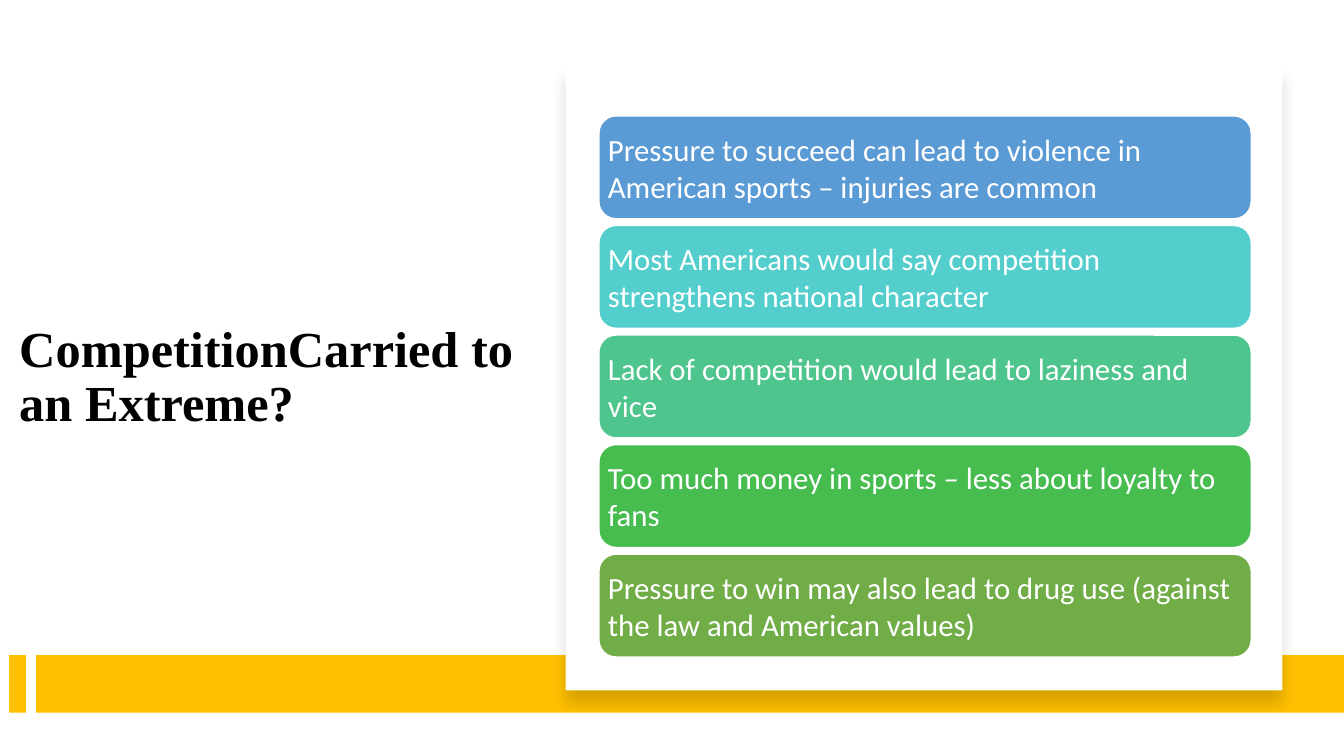
from dataclasses import dataclass

import pptx
import pptx.dml.color
import pptx.enum.shapes
import pptx.enum.text
import pptx.oxml
import pptx.oxml.ns
import pptx.util
from pptx.util import Inches


@dataclass(frozen=True)
class Theme:
    black: str = "000000"
    white: str = "FFFFFF"
    gold: str = "FFC000"
    point_fills: tuple = ("5B9BD5", "54CDCD", "4DC58D", "47BC4F", "71AD47")
    title_font: str = "Times New Roman"
    body_font: str = "Calibri"
    title_size: int = 36
    body_size: int = 22


THEME = Theme()

TITLE = "CompetitionCarried to an Extreme?"
POINTS = (
    "Pressure to succeed can lead to violence in American sports – injuries are common",
    "Most Americans would say competition strengthens national character",
    "Lack of competition would lead to laziness and vice",
    "Too much money in sports – less about loyalty to fans",
    "Pressure to win may also lead to drug use (against the law and American values)",
)


def rgb(color):
    return pptx.dml.color.RGBColor.from_string(color)


def write_text(shape, text, *, font, size, color, bold=False, line_spacing=1.0, margin=0.1):
    """Fill a shape with one left-aligned, vertically centred paragraph."""
    frame = shape.text_frame
    frame.word_wrap = True
    frame.auto_size = pptx.enum.text.MSO_AUTO_SIZE.NONE
    frame.vertical_anchor = pptx.enum.text.MSO_ANCHOR.MIDDLE
    frame.margin_left = frame.margin_right = Inches(margin)
    frame.margin_top = frame.margin_bottom = Inches(margin)
    paragraph = frame.paragraphs[0]
    paragraph.alignment = pptx.enum.text.PP_ALIGN.LEFT
    paragraph.line_spacing = line_spacing
    run = paragraph.add_run()
    run.text = text
    run.font.name = font
    run.font.size = pptx.util.Pt(size)
    run.font.bold = bold
    run.font.color.rgb = rgb(color)


def add_block(slide, left, top, width, height, fill, *, rounded=False, line=None):
    shapes = pptx.enum.shapes.MSO_SHAPE
    kind = shapes.ROUNDED_RECTANGLE if rounded else shapes.RECTANGLE
    block = slide.shapes.add_shape(
        kind, Inches(left), Inches(top), Inches(width), Inches(height))
    block.shadow.inherit = False
    block.fill.solid()
    block.fill.fore_color.rgb = rgb(fill)
    if line:
        block.line.color.rgb = rgb(line)
        block.line.width = pptx.util.Pt(1)
    else:
        block.line.fill.background()
    return block


def add_soft_shadow(shape, color, *, blur, distance, opacity):
    """Cast a shadow straight down; lengths in points, opacity in percent."""
    effects = shape._element.spPr.find(pptx.oxml.ns.qn("a:effectLst"))
    effects.append(pptx.oxml.parse_xml(
        f'<a:outerShdw {pptx.oxml.ns.nsdecls("a")} blurRad="{pptx.util.Pt(blur)}" '
        f'dist="{pptx.util.Pt(distance)}" dir="5400000" algn="t" rotWithShape="0">'
        f'<a:srgbClr val="{color}"><a:alpha val="{opacity * 1000}"/></a:srgbClr>'
        "</a:outerShdw>"))


def place_title(slide):
    title = slide.shapes.title
    title.left, title.top = Inches(0.09), Inches(1.2)
    title.width, title.height = Inches(5.73), Inches(5.1)
    write_text(title, TITLE, font=THEME.title_font, size=THEME.title_size,
               color=THEME.black, bold=True, line_spacing=0.9)


def add_points(slide):
    first_top, pitch = 1.15, 1.087
    for index, (text, fill) in enumerate(zip(POINTS, THEME.point_fills)):
        block = add_block(slide, 5.94, first_top + index * pitch, 6.47, 1.02, fill,
                          rounded=True, line=THEME.white)
        write_text(block, text, font=THEME.body_font, size=THEME.body_size,
                   color=THEME.white, margin=0.04)


def main():
    presentation = pptx.Presentation()
    presentation.slide_width = Inches(13.33)
    presentation.slide_height = Inches(7.5)
    title_only = presentation.slide_layouts[5]
    slide = presentation.slides.add_slide(title_only)

    place_title(slide)
    for left, width in ((0.09, 0.17), (0.36, 12.97)):
        add_block(slide, left, 6.5, width, 0.57, THEME.gold)
    panel = add_block(slide, 5.61, 0.64, 7.11, 6.21, THEME.white)
    add_soft_shadow(panel, THEME.black, blur=11, distance=10, opacity=15)
    add_points(slide)

    presentation.save("out.pptx")


if __name__ == "__main__":
    main()
